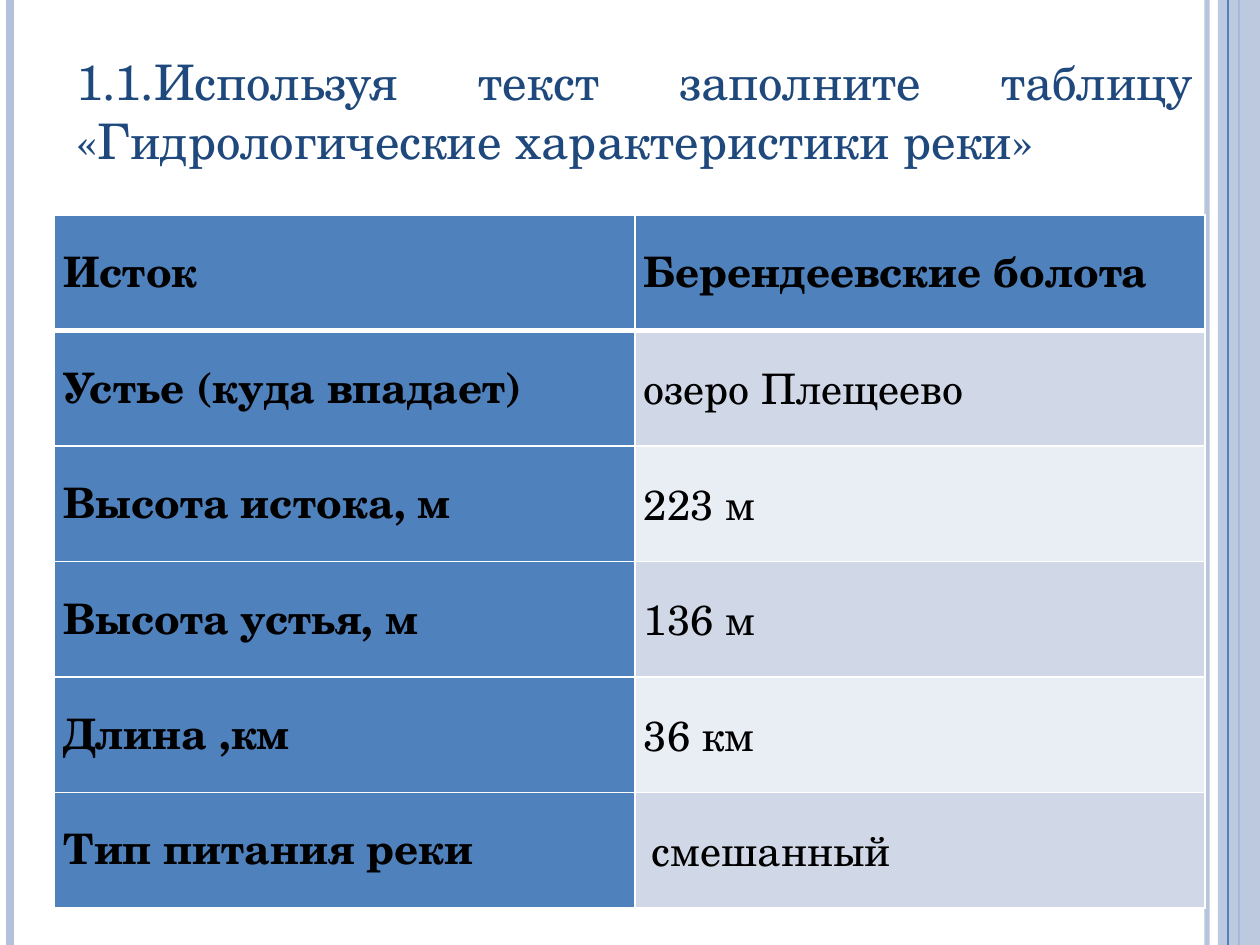
from lxml.etree import SubElement as Sub
from pptx import Presentation
from pptx.dml.color import RGBColor
from pptx.enum.shapes import MSO_CONNECTOR as Conn, MSO_SHAPE as Shape
from pptx.enum.text import MSO_ANCHOR as Anchor, PP_ALIGN as Align
from pptx.oxml.ns import qn
from pptx.util import Emu, Pt


def px(n):
    """Turn pixels into EMU."""
    return Emu(round(n * 914400 / 126))


def paint(color, code):
    """Set a colour from a hex string."""
    color.rgb = RGBColor.from_string(code)


def fade(node, pct):
    """Make the solid colour inside a node partly opaque."""
    hue = next(node.iter(qn("a:srgbClr")))
    Sub(hue, qn("a:alpha"), val=str(pct * 1000))


class Deck:
    """Hold the style and the current slide."""

    face = "TeX Gyre Schola"
    blue = "4F81BD"
    pale = "B3C1DB"
    navy = "1F497D"
    bands = ("E9EDF4", "D0D8E8")

    def __init__(self, wide, high):
        """Start a deck with one title-only slide."""
        self.prs = Presentation()
        self.prs.slide_width, self.prs.slide_height = px(wide), px(high)
        self.high = high
        self.slide = self.prs.slides.add_slide(self.prs.slide_layouts[5])
        self.shapes = self.slide.shapes

    def font(self, para, size, code, bold=False):
        """Format the runs of a paragraph."""
        for run in para.runs:
            run.font.name, run.font.size, run.font.bold = self.face, Pt(size), bold
            paint(run.font.color, code)

    def title(self, text, x, y, w, h):
        """Fill and place the title."""
        box = self.shapes.title
        box.left, box.top, box.width, box.height = map(px, (x, y, w, h))
        frame = box.text_frame
        frame.text = text
        frame.word_wrap, frame.vertical_anchor = True, Anchor.TOP
        para = frame.paragraphs[0]
        para.alignment = Align.JUSTIFY
        self.font(para, 28, self.navy)

    def rule(self, x, width, code, pct=100):
        """Draw a full-height line."""
        line = self.shapes.add_connector(Conn.STRAIGHT, px(x), 0, px(x), px(self.high))
        line.line.width = Pt(width)
        paint(line.line.color, code)
        prop = line._element.spPr
        if pct < 100:
            fade(prop, pct)
        Sub(prop, qn("a:effectLst"))

    def band(self, x, w, code, pct):
        """Draw a full-height strip."""
        box = self.shapes.add_shape(Shape.RECTANGLE, px(x), 0, px(w), px(self.high))
        box.shadow.inherit = False
        box.fill.solid()
        paint(box.fill.fore_color, code)
        box.line.fill.background()
        fade(box._element.spPr, pct)

    def edge(self, cell, side, width):
        """Draw one white cell border."""
        line = Sub(cell._tc.get_or_add_tcPr(), qn("a:ln" + side), w=str(Pt(width)))
        Sub(Sub(line, qn("a:solidFill")), qn("a:srgbClr"), val="FFFFFF")

    def cell(self, cell, text, row, col):
        """Fill and format a table cell."""
        for side in "LRTB":
            thick = (row, side) in ((0, "B"), (1, "T"))
            self.edge(cell, side, 3 if thick else 1)
        head = row == 0 or col == 0
        cell.fill.solid()
        paint(cell.fill.fore_color, self.blue if head else self.bands[row % 2])
        cell.margin_left = cell.margin_right = px(9)
        cell.margin_top, cell.margin_bottom = px(54), 0
        cell.vertical_anchor = Anchor.TOP
        cell.text_frame.text = text
        para = cell.text_frame.paragraphs[0]
        para.alignment, para.line_spacing = Align.JUSTIFY, Pt(19.5)
        self.font(para, 24, "000000", head)

    def table(self, rows, x, y, cols, h):
        """Add a table with equal rows."""
        grid = self.shapes.add_table(
            len(rows), len(cols), px(x), px(y), px(sum(cols)), px(h)).table
        grid.first_row = grid.horz_banding = False
        for col, w in enumerate(cols):
            grid.columns[col].width = px(w)
        for row, texts in enumerate(rows):
            for col, text in enumerate(texts):
                self.cell(grid.cell(row, col), text, row, col)
        return grid


def main():
    """Build the river slide."""
    deck = Deck(1260, 945)
    deck.rule(1207, 3, deck.pale, 93)
    deck.rule(10, 4.5, deck.pale)
    deck.rule(1239, 1.5, deck.blue)
    deck.band(1218, 42, deck.pale, 87)
    deck.rule(1228, 0.75, deck.blue)
    deck.title("1.1.Используя текст заполните таблицу "
               "«Гидрологические характеристики реки»", 64, 45, 1142, 170)
    rows = (
        ("Исток", "Берендеевские болота"),
        ("Устье (куда впадает)", "озеро Плещеево"),
        ("Высота истока, м", "223 м"),
        ("Высота устья, м", "136 м"),
        ("Длина ,км", "36 км"),
        ("Тип питания реки", "смешанный"),
    )
    grid = deck.table(rows, 54, 215, (581, 570), 693)
    grid.cell(5, 1).margin_left = px(17)
    deck.prs.save("out.pptx")


if __name__ == "__main__":
    main()
